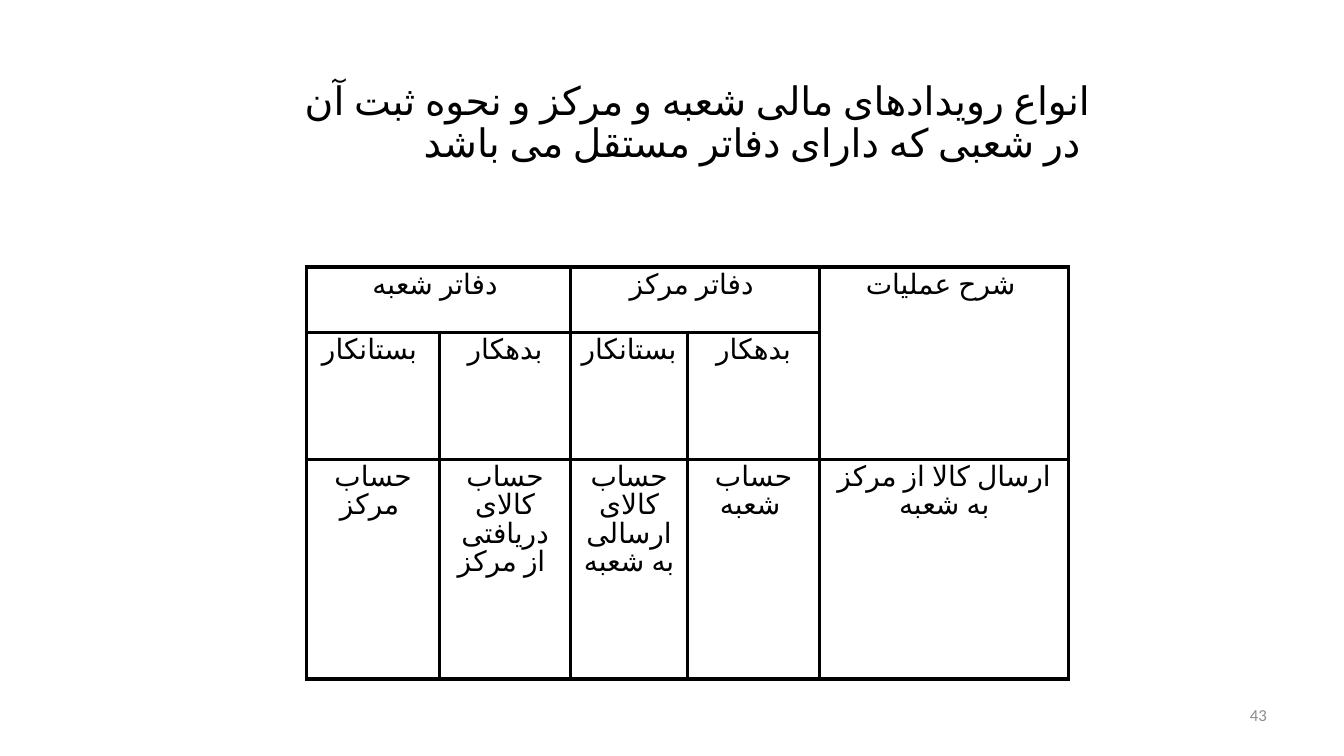
"""Build a slide on recording branch and head-office transactions."""
import pptx
import pptx.dml.color
import pptx.enum.lang
import pptx.enum.text
import pptx.oxml
import pptx.oxml.ns
import pptx.util

Inches, Pt = pptx.util.Inches, pptx.util.Pt
PP_ALIGN, ANCHOR = pptx.enum.text.PP_ALIGN, pptx.enum.text.MSO_ANCHOR
RGBColor = pptx.dml.color.RGBColor
FARSI = pptx.enum.lang.MSO_LANGUAGE_ID.FARSI

BLACK = RGBColor(0x00, 0x00, 0x00)
WHITE = RGBColor(0xFF, 0xFF, 0xFF)
GREY = RGBColor(0x8C, 0x8C, 0x8C)
SLIDE_W, SLIDE_H = Inches(13.33), Inches(7.5)

TITLE = "انواع رويدادهای مالی شعبه و مرکز و نحوه ثبت آن در شعبی که دارای دفاتر مستقل می باشد "
COLS = [1.32, 1.3, 1.16, 1.31, 2.47]
ROWS = [0.65, 1.26, 2.18]
CELLS = [
    ["دفاتر شعبه ", None, "دفاتر مرکز ", None, "شرح عمليات "],
    ["بستانکار ", "بدهکار", "بستانکار ", "بدهکار", None],
    ["حساب مرکز ", "حساب کالای دريافتی از مرکز ", "حساب کالای ارسالی به شعبه ",
     "حساب شعبه ", "ارسال کالا از مرکز به شعبه"],
]
MERGES = [((0, 0), (0, 1)), ((0, 2), (0, 3)), ((0, 4), (1, 4))]


def share(x, y, w, h):
    """Turn shares of the slide's size into a left, top, width, height box."""
    return int(x * SLIDE_W), int(y * SLIDE_H), int(w * SLIDE_W), int(h * SLIDE_H)


def format_text(tf, size, font, color, align):
    """Format the only paragraph of a text frame and return it."""
    p = tf.paragraphs[0]
    p.alignment = align
    for r in p.runs:
        r.font.size, r.font.name, r.font.color.rgb = Pt(size), font, color
        r.font.language_id = FARSI
    return p


def add_title(slide, text, box):
    """Move the title placeholder into the box and fill it."""
    sp = slide.shapes.title
    sp.left, sp.top, sp.width, sp.height = box
    tf = sp.text_frame
    tf.text = text
    tf.word_wrap = True
    tf.auto_size = pptx.enum.text.MSO_AUTO_SIZE.NONE
    tf.vertical_anchor = ANCHOR.TOP
    p = format_text(tf, 28, "Calibri", BLACK, PP_ALIGN.RIGHT)
    p.line_spacing, p.space_before = 0.9, Pt(10)
    pPr = p._p.get_or_add_pPr()
    pPr.set("marL", str(Inches(0.25)))
    pPr.set("indent", str(-Inches(0.25)))


def add_page_number(slide, text, box):
    """Write the page number at the right of the box."""
    tf = slide.shapes.add_textbox(*box).text_frame
    tf.text = text
    tf.word_wrap = True
    tf.vertical_anchor = ANCHOR.MIDDLE
    format_text(tf, 12, "Calibri", GREY, PP_ALIGN.RIGHT)


def set_borders(cell, color, width):
    """Draw a solid line on the four sides of a cell."""
    tcPr = cell._tc.get_or_add_tcPr()
    for i, side in enumerate(("lnL", "lnR", "lnT", "lnB")):
        tcPr.insert(i, pptx.oxml.parse_xml(
            f'<a:{side} {pptx.oxml.ns.nsdecls("a")} w="{Pt(width)}">'
            f'<a:solidFill><a:srgbClr val="{color}"/></a:solidFill></a:{side}>'))


def add_ledger(slide, box):
    """Add the table of debit and credit accounts."""
    table = slide.shapes.add_table(len(ROWS), len(COLS), *box).table
    table.first_row = table.horz_banding = False
    for col, width in zip(table.columns, COLS):
        col.width = Inches(width)
    for row, height in zip(table.rows, ROWS):
        row.height = Inches(height)
    for first, last in MERGES:
        table.cell(*first).merge(table.cell(*last))
    for i, texts in enumerate(CELLS):
        for j, text in enumerate(texts):
            cell = table.cell(i, j)
            cell.fill.solid()
            cell.fill.fore_color.rgb = WHITE
            set_borders(cell, BLACK, 3)
            if text:
                cell.text_frame.text = text
                p = format_text(cell.text_frame, 20, "Lato", BLACK, PP_ALIGN.CENTER)
                p.space_before = Pt(4)
    table.cell(2, 4).text_frame.paragraphs[0]._p.get_or_add_pPr().set("rtl", "1")


def main():
    """Build and save the slide."""
    prs = pptx.Presentation()
    prs.slide_width, prs.slide_height = SLIDE_W, SLIDE_H
    slide = prs.slides.add_slide(prs.slide_layouts[5])
    add_title(slide, TITLE, share(0.187, 0.101, 0.632, 0.172))
    add_ledger(slide, share(0.228, 0.353, 0.567, 0.545))
    add_page_number(slide, "43", share(0.717, 0.911, 0.233, 0.069))
    prs.save("out.pptx")


if __name__ == "__main__":
    main()
